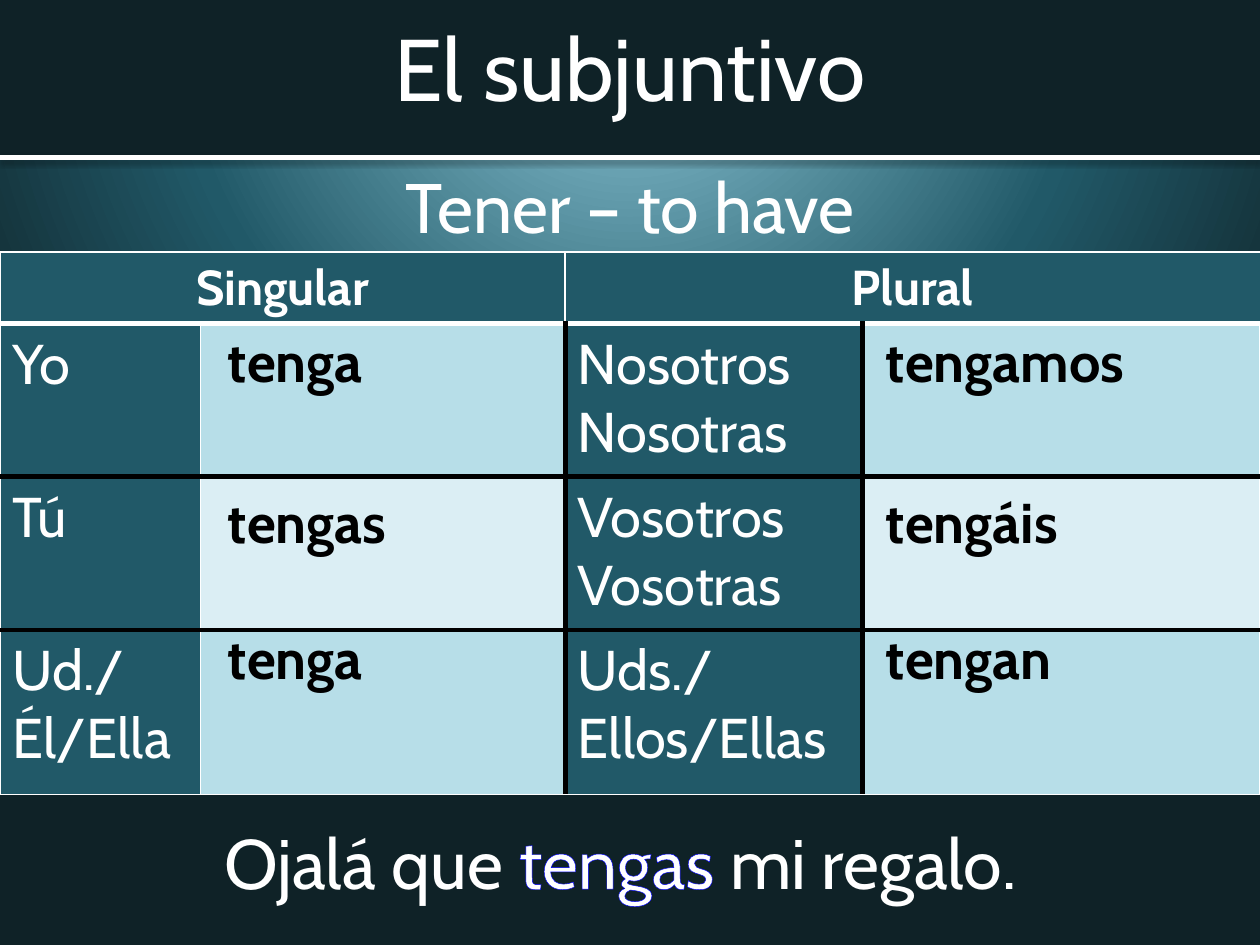
import pptx
import pptx.dml.color
import pptx.enum.shapes
import pptx.enum.text
import pptx.oxml
import pptx.oxml.ns
import pptx.util

Pt = pptx.util.Pt
ALIGN = pptx.enum.text.PP_ALIGN
ANCHOR = pptx.enum.text.MSO_ANCHOR
FONT = "Cabin"
COLORS = {
    "white": "FFFFFF", "black": "000000", "glow": "93CDDD", "teal": "215968",
    "night": "0F2227", "pale": "B7DEE8", "paler": "DBEEF4", "outline": "0000FF",
}
NO_GRID_STYLE = "{2D5ABB26-0587-4C30-8999-92F81FD0307C}"
COLUMNS = [114.5, 208.5, 170, 227]
ROWS = [41, 87.5, 87.5, 94]
PRONOUNS = [
    ("Yo", "Nosotros\nNosotras"),
    ("Tú", "Vosotros\nVosotras"),
    ("Ud./Él/Ella", "Uds./Ellos/Ellas"),
]
VERBS = [(184, "tenga", "tengamos"), (276, "tengas", "tengáis"), (354, "tenga", "tengan")]


def rgb(name):
    """Return the named colour."""
    return pptx.dml.color.RGBColor.from_string(COLORS[name])


def make_xml(tag, content, attributes=""):
    """Build a DrawingML element."""
    namespace = pptx.oxml.ns.nsdecls("a")
    return pptx.oxml.parse_xml(f"<a:{tag} {namespace} {attributes}>{content}</a:{tag}>")


def solid_xml(name):
    """Return the markup of a solid fill."""
    return f'<a:solidFill><a:srgbClr val="{COLORS[name]}"/></a:solidFill>'


def set_background(slide):
    """Fill the background with a radial gradient centred above the slide."""
    slide.background.fill.solid()
    stops = "".join(
        f'<a:gs pos="{position * 1000}"><a:srgbClr val="{COLORS[name]}"/></a:gs>'
        for position, name in [(0, "glow"), (58, "teal"), (100, "night")])
    gradient = make_xml("gradFill", f'<a:gsLst>{stops}</a:gsLst><a:path path="circle">'
                        '<a:fillToRect l="50000" t="-80000" r="50000" b="180000"/></a:path>')
    solid = next(slide.element.iter(pptx.oxml.ns.qn("a:solidFill")))
    solid.getparent().replace(solid, gradient)


def add_band(slide):
    """Add the dark title band and the shadowed rule beneath it."""
    band = slide.shapes.add_shape(
        pptx.enum.shapes.MSO_SHAPE.RECTANGLE, 0, 0, Pt(720), Pt(90))
    band.shadow.inherit = False
    band.fill.solid()
    band.fill.fore_color.rgb = rgb("night")
    band.line.fill.background()


def add_rule(slide):
    """Add the white rule with its soft shadow."""
    rule = slide.shapes.add_connector(
        pptx.enum.shapes.MSO_CONNECTOR.STRAIGHT, 0, Pt(90), Pt(720), Pt(90))
    rule.line.color.rgb = rgb("white")
    rule.line.width = Pt(3)
    shadow = (f'<a:outerShdw blurRad="{Pt(3.1)}" dist="{Pt(1.6)}" dir="5400000" '
              f'rotWithShape="0"><a:srgbClr val="{COLORS["black"]}">'
              '<a:alpha val="38000"/></a:srgbClr></a:outerShdw>')
    rule.element.spPr.append(make_xml("effectLst", shadow))


def style_text(frame, size, color, bold=False, alignment=ALIGN.LEFT):
    """Style every paragraph of a text frame."""
    for paragraph in frame.paragraphs:
        paragraph.alignment = alignment
        paragraph.font.name = FONT
        paragraph.font.size = Pt(size)
        paragraph.font.bold = bold
        paragraph.font.color.rgb = rgb(color)


def add_text(slide, box, runs, size, anchor=ANCHOR.TOP):
    """Add a centred white text box and return its runs."""
    frame = slide.shapes.add_textbox(*map(Pt, box)).text_frame
    frame.word_wrap = True
    frame.vertical_anchor = anchor
    paragraph = frame.paragraphs[0]
    for text in runs:
        paragraph.add_run().text = text
    style_text(frame, size, "white", alignment=ALIGN.CENTER)
    return paragraph.runs


def outline_run(run, color, width):
    """Outline the letters of a run."""
    properties = run.font._element
    properties.insert(0, make_xml("ln", solid_xml(color), f'w="{Pt(width)}"'))


def add_plain_table(slide, left, top, columns, rows):
    """Add a table without banding or grid."""
    shape = slide.shapes.add_table(
        len(rows), len(columns), Pt(left), Pt(top), Pt(sum(columns)), Pt(sum(rows)))
    table = shape.table
    table.first_row = table.horz_banding = False
    next(shape.element.iter(pptx.oxml.ns.qn("a:tableStyleId"))).text = NO_GRID_STYLE
    for column, width in zip(table.columns, columns):
        column.width = Pt(width)
    for row, height in zip(table.rows, rows):
        row.height = Pt(height)
    return table


def vertical_edge(row, boundary):
    """Return colour and width of a vertical grid line, or None inside a merged cell."""
    if row == 0:
        return None if boundary in (1, 3) else ("white", 1)
    return ("black", 3) if boundary in (2, 3) else ("white", 1)


def set_borders(cell, row, column):
    """Draw the four borders of a grid cell."""
    horizontal = [("white", 1), ("white", 3), ("black", 3), ("black", 3), ("white", 1)]
    edges = {
        "lnL": vertical_edge(row, column), "lnR": vertical_edge(row, column + 1),
        "lnT": horizontal[row], "lnB": horizontal[row + 1],
    }
    properties = cell._tc.get_or_add_tcPr()
    for tag, edge in edges.items():
        if edge:
            color, width = edge
            properties.append(make_xml(tag, solid_xml(color), f'w="{Pt(width)}"'))


def add_conjugation_table(slide):
    """Add the grid of pronouns with empty cells for the verb forms."""
    table = add_plain_table(slide, 0, 144, COLUMNS, ROWS)
    for row in range(len(ROWS)):
        for column in range(len(COLUMNS)):
            cell = table.cell(row, column)
            set_borders(cell, row, column)
            is_verb = row > 0 and column % 2
            cell.fill.solid()
            cell.fill.fore_color.rgb = rgb(("pale" if row % 2 else "paler") if is_verb else "teal")
    for column, heading in [(0, "Singular"), (2, "Plural")]:
        cell = table.cell(0, column)
        cell.merge(table.cell(0, column + 1))
        cell.text = heading
        style_text(cell.text_frame, 28, "white", True, ALIGN.CENTER)
    for row, pronouns in enumerate(PRONOUNS, 1):
        for column, text in zip((0, 2), pronouns):
            cell = table.cell(row, column)
            cell.text = text
            style_text(cell.text_frame, 32, "white")


def add_verb(slide, left, top, text):
    """Add a verb form as a one-cell table."""
    cell = add_plain_table(slide, left, top, [200], [46]).cell(0, 0)
    cell.fill.background()
    cell.text = text
    style_text(cell.text_frame, 32, "black", True)


def main():
    """Build the slide and save it."""
    presentation = pptx.Presentation()
    presentation.slide_width, presentation.slide_height = Pt(720), Pt(540)
    slide = presentation.slides.add_slide(presentation.slide_layouts[6])
    set_background(slide)
    add_band(slide)
    add_text(slide, (0, 90, 720, 54), ["Tener – to have"], 40)
    add_rule(slide)
    add_text(slide, (0, 0, 720, 76), ["El subjuntivo"], 50, ANCHOR.MIDDLE)
    add_conjugation_table(slide)
    for top, singular, plural in VERBS:
        add_verb(slide, 123, top, singular)
        add_verb(slide, 499, top, plural)
    sentence = add_text(slide, (38, 464.5, 633, 55.5), ["Ojalá que ", "tengas", " mi regalo."], 40)
    outline_run(sentence[1], "outline", 0.75)
    presentation.save("out.pptx")


if __name__ == "__main__":
    main()
